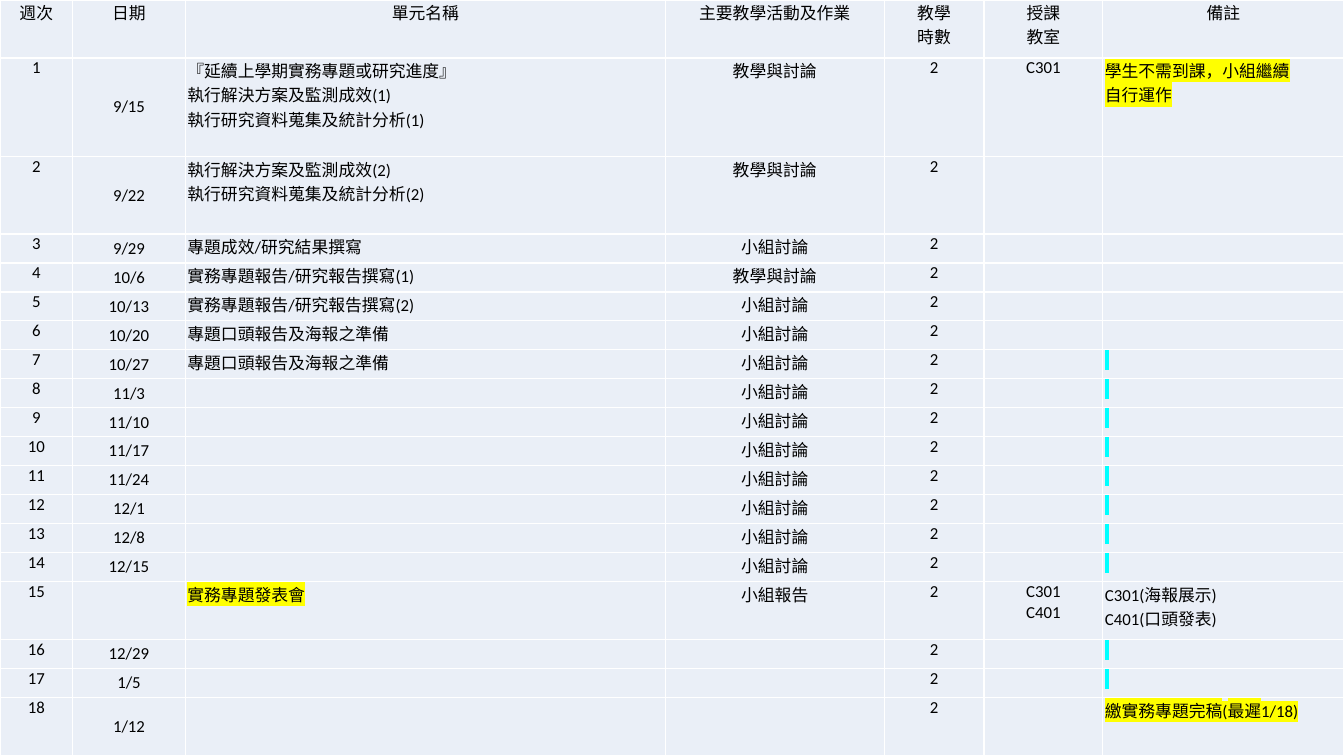
from dataclasses import dataclass

from lxml.etree import SubElement
from pptx import Presentation
from pptx.dml.color import RGBColor
from pptx.enum.text import MSO_ANCHOR, PP_ALIGN
from pptx.oxml.ns import qn
from pptx.table import _Cell
from pptx.util import Inches, Pt

COLOURS = {
    "text": "000000",
    "cell": "EAEFF7",
    "border": "FFFFFF",
    "yellow": "FFFF00",
    "cyan": "00FFFF",
}
FONT = "Calibri"
PAGE_WIDTH, PAGE_HEIGHT = 13.33, 7.5
COLUMN_SHARES = (0.72, 1.12, 4.76, 2.17, 0.99, 1.18, 2.39)
DATE_COLUMN = 1
LEFT_COLUMNS = (2, 6)
BORDER_SIDES = ("a:lnL", "a:lnR", "a:lnT", "a:lnB")


@dataclass(frozen=True)
class Entry:
    text: str = ""
    highlight: str = ""


@dataclass(frozen=True)
class Week:
    number: str
    date: str = ""
    topic: Entry = Entry()
    activity: str = ""
    hours: str = "2"
    room: str = ""
    remark: Entry = Entry()
    height: float = 1

    def entries(self) -> tuple[Entry, ...]:
        return (Entry(self.number), Entry(self.date), self.topic,
                Entry(self.activity), Entry(self.hours), Entry(self.room), self.remark)


LECTURE, GROUP = "教學與討論", "小組討論"
MARK = Entry(" ", "cyan")
POSTER = Entry("專題口頭報告及海報之準備")
GROUP_DATES = ("11/3", "11/10", "11/17", "11/24", "12/1", "12/8", "12/15")

WEEKS = [
    Week("週次", "日期", Entry("單元名稱"), "主要教學活動及作業", "教學\n時數",
         "授課\n教室", Entry("備註"), 2),
    Week("1", "9/15",
         Entry("『延續上學期實務專題或研究進度』\n執行解決方案及監測成效(1)\n執行研究資料蒐集及統計分析(1)"),
         LECTURE, room="C301",
         remark=Entry("學生不需到課，小組繼續\n自行運作", "yellow"), height=3.4),
    Week("2", "9/22", Entry("執行解決方案及監測成效(2)\n執行研究資料蒐集及統計分析(2)"),
         LECTURE, height=2.67),
    Week("3", "9/29", Entry("專題成效/研究結果撰寫"), GROUP),
    Week("4", "10/6", Entry("實務專題報告/研究報告撰寫(1)"), LECTURE),
    Week("5", "10/13", Entry("實務專題報告/研究報告撰寫(2)"), GROUP),
    Week("6", "10/20", POSTER, GROUP),
    Week("7", "10/27", POSTER, GROUP, remark=MARK),
    *(Week(str(number), date, activity=GROUP, remark=MARK)
      for number, date in enumerate(GROUP_DATES, 8)),
    Week("15", topic=Entry("實務專題發表會", "yellow"), activity="小組報告",
         room="C301\nC401", remark=Entry("C301(海報展示)\nC401(口頭發表)"), height=2),
    Week("16", "12/29", remark=MARK),
    Week("17", "1/5", remark=MARK),
    Week("18", "1/12", remark=Entry("繳實務專題完稿(最遲1/18)", "yellow"), height=2),
]


def colour(name: str) -> RGBColor:
    return RGBColor.from_string(COLOURS[name])


def draw_borders(cell: _Cell) -> None:
    properties = cell._tc.get_or_add_tcPr()
    for position, side in enumerate(BORDER_SIDES):
        line = properties.makeelement(qn(side), {"w": str(Pt(1))})
        fill = SubElement(line, qn("a:solidFill"))
        SubElement(fill, qn("a:srgbClr"), val=COLOURS["border"])
        properties.insert(position, line)


def write_entry(cell: _Cell, entry: Entry, align: PP_ALIGN) -> None:
    cell.text = entry.text
    for para in cell.text_frame.paragraphs:
        para.alignment = align
        para.font.name = FONT
        para.font.size = Pt(12)
        para.font.color.rgb = colour("text")
        if not entry.text:
            SubElement(para._p, qn("a:endParaRPr"), sz="1200")
        if entry.highlight:
            for span in para.runs:
                mark = SubElement(span._r.get_or_add_rPr(), qn("a:highlight"))
                SubElement(mark, qn("a:srgbClr"), val=COLOURS[entry.highlight])


def draw_cell(cell: _Cell, entry: Entry, column: int, is_header: bool) -> None:
    cell.margin_left = cell.margin_right = Inches(0.02)
    cell.margin_top = cell.margin_bottom = 0
    middle = column == DATE_COLUMN and not is_header
    cell.vertical_anchor = MSO_ANCHOR.MIDDLE if middle else MSO_ANCHOR.TOP
    cell.fill.solid()
    cell.fill.fore_color.rgb = colour("cell")
    draw_borders(cell)
    left = column in LEFT_COLUMNS and not is_header
    write_entry(cell, entry, PP_ALIGN.LEFT if left else PP_ALIGN.CENTER)


def main() -> None:
    deck = Presentation()
    deck.slide_width, deck.slide_height = Inches(PAGE_WIDTH), Inches(PAGE_HEIGHT)
    page = deck.slides.add_slide(deck.slide_layouts[6])
    schedule = page.shapes.add_table(
        len(WEEKS), len(COLUMN_SHARES), 0, 0, deck.slide_width, deck.slide_height).table
    schedule.first_row = schedule.horz_banding = False

    for column, share in zip(schedule.columns, COLUMN_SHARES):
        column.width = int(deck.slide_width * share / sum(COLUMN_SHARES))
    total_height = sum(week.height for week in WEEKS)
    for row_index, (row, week) in enumerate(zip(schedule.rows, WEEKS)):
        row.height = int(deck.slide_height * week.height / total_height)
        for column, (cell, entry) in enumerate(zip(row.cells, week.entries())):
            draw_cell(cell, entry, column, row_index == 0)
    deck.save("out.pptx")


if __name__ == "__main__":
    main()
